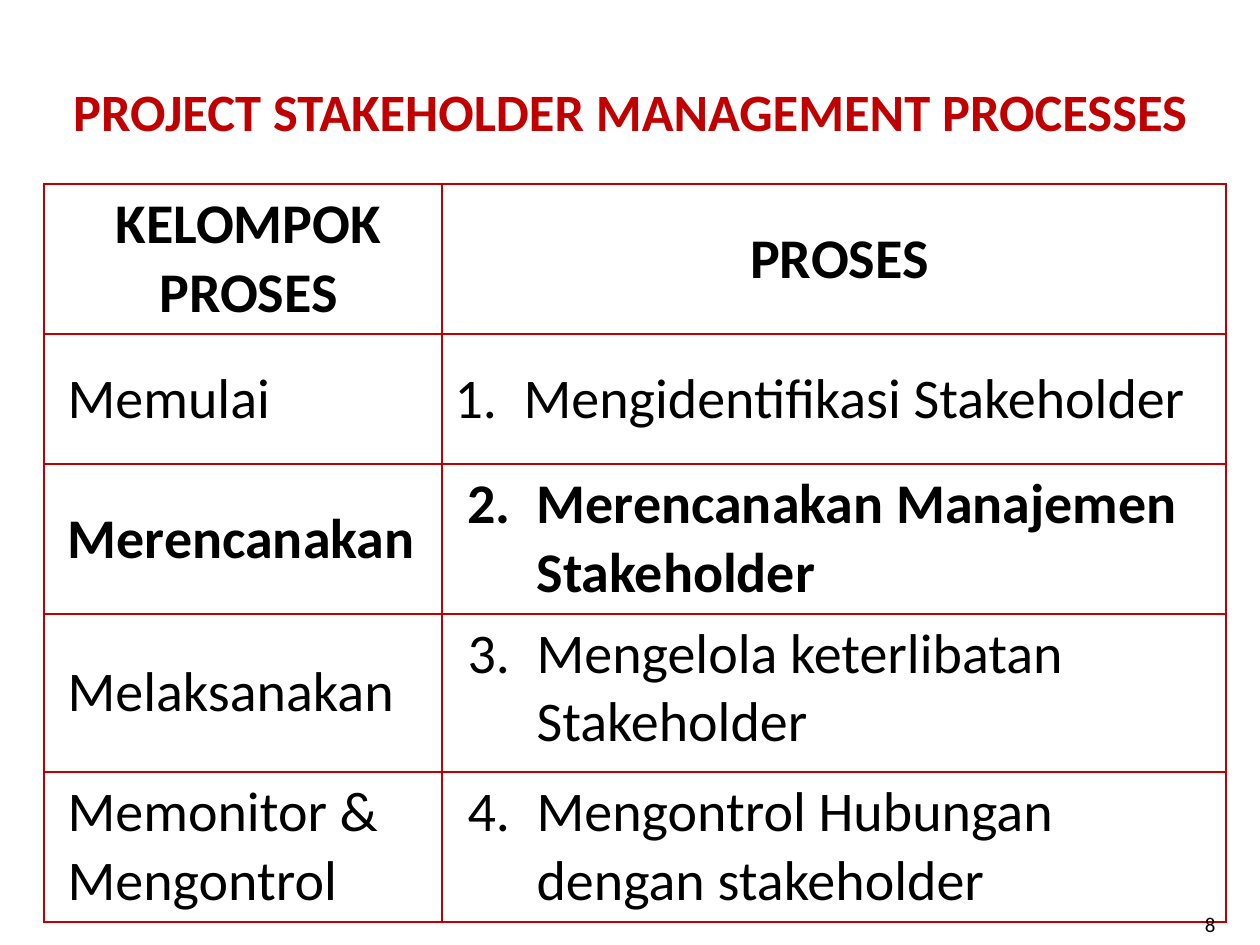
import pptx
import pptx.dml.color
import pptx.enum.text
import pptx.oxml.ns
import pptx.util
from lxml import etree

PX = 914400 / 126
FONT = "Calibri"
COLORS = {"accent": "C00000", "text": "000000", "paper": "FFFFFF"}
ALIGN = pptx.enum.text.PP_ALIGN
MIDDLE = pptx.enum.text.MSO_ANCHOR.MIDDLE
TOP = pptx.enum.text.MSO_ANCHOR.TOP

COL_WIDTHS = [398, 784]
ROW_HEIGHTS = [150, 130, 150, 158, 150]
LABEL_INDENT = 11
# group, process, bold, (left margin, number offset), anchor of the process
ROWS = [
    ("Memulai", "1.\tMengidentifikasi Stakeholder", False, (69, 0), MIDDLE),
    ("Merencanakan", "2.\tMerencanakan Manajemen Stakeholder", True, (82, 13), MIDDLE),
    ("Melaksanakan", "3.\tMengelola keterlibatan Stakeholder", False, (82, 13), TOP),
    ("Memonitor & Mengontrol", "4.\tMengontrol Hubungan dengan stakeholder",
     False, (82, 13), MIDDLE),
]


def px(n):
    return pptx.util.Emu(round(n * PX))


def rgb(name):
    return pptx.dml.color.RGBColor.from_string(COLORS[name])


def write(tf, text, size=32, bold=False, color="text", align=ALIGN.LEFT,
          margin=0, first=None):
    """Fill tf with one paragraph; first is where its first line starts."""
    tf.word_wrap = True
    p = tf.paragraphs[0]
    p.alignment = align
    pPr = p._p.get_or_add_pPr()
    pPr.set("marL", str(px(margin)))
    pPr.set("indent", str(px((margin if first is None else first) - margin)))
    r = p.add_run()
    r.text = text
    r.font.name = FONT
    r.font.size = pptx.util.Pt(size)
    r.font.bold = bold
    r.font.color.rgb = rgb(color)


def style_cell(cell, anchor=MIDDLE):
    cell.vertical_anchor = anchor
    tcPr = cell._tc.get_or_add_tcPr()
    for side in ("lnL", "lnR", "lnT", "lnB"):
        ln = etree.SubElement(tcPr, pptx.oxml.ns.qn(f"a:{side}"), w="12700")
        fill = etree.SubElement(ln, pptx.oxml.ns.qn("a:solidFill"))
        etree.SubElement(fill, pptx.oxml.ns.qn("a:srgbClr"), val=COLORS["accent"])
    cell.fill.solid()
    cell.fill.fore_color.rgb = rgb("paper")


def add_title(s, x, y, w, h):
    title = s.shapes.title
    title.left, title.top, title.width, title.height = map(px, (x, y, w, h))
    tf = title.text_frame
    tf.auto_size = pptx.enum.text.MSO_AUTO_SIZE.NONE
    tf.vertical_anchor = MIDDLE
    write(tf, "PROJECT STAKEHOLDER MANAGEMENT PROCESSES", size=30, bold=True,
          color="accent", align=ALIGN.CENTER)


def add_process_table(s, x, y):
    frame = s.shapes.add_table(len(ROW_HEIGHTS), len(COL_WIDTHS), px(x), px(y),
                               px(sum(COL_WIDTHS)), px(sum(ROW_HEIGHTS)))
    table = frame.table
    table.first_row = table.horz_banding = False
    for col, width in zip(table.columns, COL_WIDTHS):
        col.width = px(width)
    for row, height in zip(table.rows, ROW_HEIGHTS):
        row.height = px(height)
    for i, heading in enumerate(("KELOMPOK PROSES", "PROSES")):
        cell = table.cell(0, i)
        style_cell(cell)
        write(cell.text_frame, heading, bold=True, align=ALIGN.CENTER,
              margin=LABEL_INDENT)
    for i, (group, process, bold, (margin, first), anchor) in enumerate(ROWS, 1):
        label, detail = table.cell(i, 0), table.cell(i, 1)
        style_cell(label)
        style_cell(detail, anchor)
        write(label.text_frame, group, bold=bold, margin=LABEL_INDENT)
        write(detail.text_frame, process, bold=bold, margin=margin, first=first)


def add_page_number(s, x, y, w, h):
    tf = s.shapes.add_textbox(px(x), px(y), px(w), px(h)).text_frame
    tf.vertical_anchor = MIDDLE
    write(tf, "8", size=12, align=ALIGN.RIGHT)


def main():
    prs = pptx.Presentation()
    prs.slide_width, prs.slide_height = px(1260), px(945)
    s = prs.slides.add_slide(prs.slide_layouts[5])
    add_title(s, 53, 53, 1155, 116)
    add_process_table(s, 44, 184)
    add_page_number(s, 966, 903, 262, 42)
    prs.save("out.pptx")


if __name__ == "__main__":
    main()
